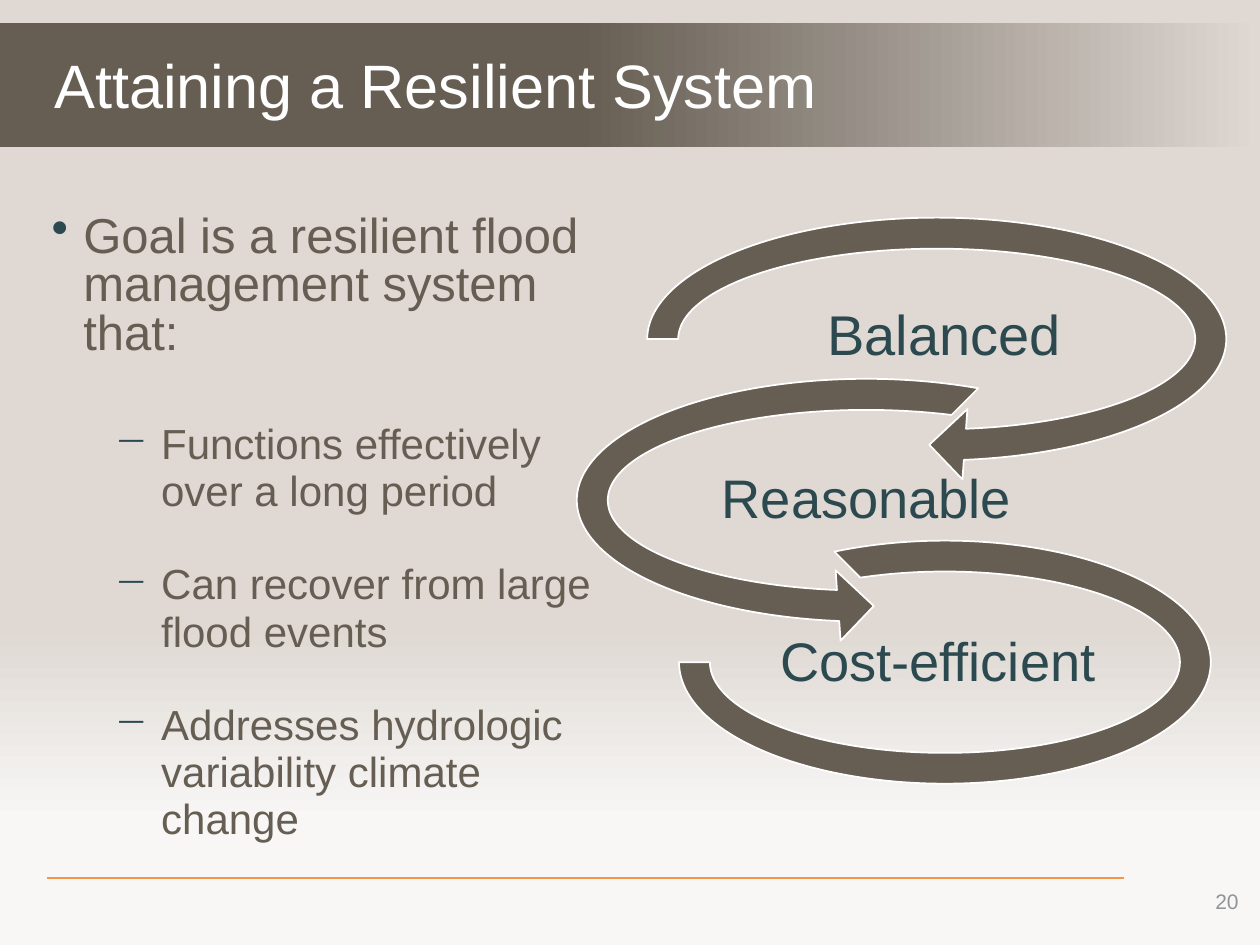
from lxml import etree
from pptx import Presentation
from pptx.dml.color import RGBColor
from pptx.enum.shapes import MSO_CONNECTOR, MSO_SHAPE
from pptx.enum.text import MSO_ANCHOR, PP_ALIGN
from pptx.oxml.ns import qn
from pptx.util import Cm, Pt

BROWN = RGBColor(0x66, 0x5E, 0x53)
TEAL = RGBColor(0x2B, 0x49, 0x4E)
SAND = RGBColor(0xDF, 0xD8, 0xD3)
PALE = RGBColor(0xF8, 0xF7, 0xF6)
ORANGE = RGBColor(0xF7, 0x96, 0x49)
GREY = RGBColor(0x8F, 0x95, 0x97)
WHITE = RGBColor(0xFF, 0xFF, 0xFF)

RECT = MSO_SHAPE.RECTANGLE
RIGHT_ARROW = MSO_SHAPE.CIRCULAR_ARROW
LEFT_ARROW = MSO_SHAPE.LEFT_CIRCULAR_ARROW
ARC = MSO_SHAPE.BLOCK_ARC
STRAIGHT = MSO_CONNECTOR.STRAIGHT
MIDDLE, TOP = MSO_ANCHOR.MIDDLE, MSO_ANCHOR.TOP
LEFT, CENTER, RIGHT = PP_ALIGN.LEFT, PP_ALIGN.CENTER, PP_ALIGN.RIGHT


def put(item, values):
    for name, value in values.items():
        setattr(item, name, value)


def blend(fill, angle, stops):
    fill.gradient()
    fill.gradient_angle = angle
    for stop, (place, color) in zip(fill.gradient_stops, stops):
        stop.position = place
        stop.color.rgb = color


class Deck:
    font = "Arial"

    def __init__(self, slide):
        self.slide = slide
        self.shapes = slide.shapes

    def words(self, para, text, size, color, **form):
        put(para, form)
        run = para.add_run()
        run.text = text
        put(run.font, {"name": self.font, "size": Pt(size)})
        run.font.color.rgb = color

    def title(self, box, text, size, color):
        shape = self.shapes.title
        put(shape, dict(zip(("left", "top", "width", "height"), map(Cm, box))))
        put(shape.text_frame, {"vertical_anchor": MIDDLE, "word_wrap": True})
        self.words(shape.text_frame.paragraphs[0], text, size, color,
                   alignment=LEFT, line_spacing=0.9)
        self.shapes._spTree.append(shape._element)

    def frame(self, box, anchor, inset=None):
        frame = self.shapes.add_textbox(*map(Cm, box)).text_frame
        put(frame, {"word_wrap": True, "vertical_anchor": anchor})
        if inset is not None:
            sides = ("left", "top", "right", "bottom")
            put(frame, {f"margin_{side}": Cm(inset) for side in sides})
        return frame

    def text(self, box, text, size, color, align, inset=None, space=1.0):
        frame = self.frame(box, MIDDLE, inset)
        self.words(frame.paragraphs[0], text, size, color,
                   alignment=align, line_spacing=space)

    def list(self, box, items):
        frame = self.frame(box, TOP)
        for i, (text, level, gap) in enumerate(items):
            para = frame.add_paragraph() if i else frame.paragraphs[0]
            mark, left, hang, size, space = LEVELS[level]
            props = para._p.get_or_add_pPr()
            props.set("marL", str(Cm(left)))
            props.set("indent", str(-Cm(hang)))
            tint = etree.SubElement(props, qn("a:buClr"))
            etree.SubElement(tint, qn("a:srgbClr")).set("val", str(TEAL))
            etree.SubElement(props, qn("a:buChar")).set("char", mark)
            self.words(para, text, size, BROWN, level=level,
                       line_spacing=space, space_before=Pt(gap))

    def shape(self, kind, box, turns=()):
        shape = self.shapes.add_shape(kind, *map(Cm, box))
        shape.shadow.inherit = False
        for i, turn in enumerate(turns):
            shape.adjustments[i] = turn
        return shape

    def band(self, box, angle, stops):
        shape = self.shape(RECT, box)
        blend(shape.fill, angle, stops)
        shape.line.fill.background()

    def loop(self, kind, box, turns):
        shape = self.shape(kind, box, turns)
        shape.fill.solid()
        shape.fill.fore_color.rgb = BROWN
        shape.line.color.rgb = WHITE
        shape.line.width = Pt(1)

    def rule(self, ends, color, width):
        line = self.shapes.add_connector(STRAIGHT, *map(Cm, ends))
        line.line.color.rgb = color
        line.line.width = Pt(width)
        etree.SubElement(line._element.spPr, qn("a:effectLst"))


LEVELS = [("•", 0.64, 0.64, 28, 0.83), ("−", 2.21, 0.94, 24, 0.94)]
GOALS = [
    ("Goal is a resilient flood management system that:", 0, 0),
    ("Functions effectively over a long period", 1, 35),
    ("Can recover from large flood events", 1, 26),
    ("Addresses hydrologic variability climate change", 1, 26),
]
LOOPS = [
    (RIGHT_ARROW, (12.65, 3.99, 12.47, 5.69), (0.11, 11.42, 45, 108, 0.125),
     "Balanced", 15.57, 6.02, 32),
    (LEFT_ARROW, (11.23, 7.24, 12.47, 5.69), (0.11, 11.42, 63, 189, 0.125),
     "Reasonable", 14, 9.32, 31),
    (ARC, (13.69, 10.9, 10.72, 4.9), (135, 108, 0.127),
     "Cost-efficient", 15.44, 12.6, 31),
]


def main():
    show = Presentation()
    show.slide_width, show.slide_height = Cm(25.4), Cm(19.05)
    deck = Deck(show.slides.add_slide(show.slide_layouts[5]))
    blend(deck.slide.background.fill, 90, [(0.13, PALE), (0.34, SAND)])
    deck.rule((22.66, 17.7, 0.94, 17.7), ORANGE, 1.5)
    deck.band((0, 0.46, 25.4, 2.51), 180, [(0, SAND), (0.54, BROWN)])
    deck.list((0.79, 4.19, 11.46, 12.57), GOALS)
    deck.title((0.84, 0.53, 23.72, 2.51), "Attaining a Resilient System", 35, WHITE)
    deck.text((17.93, 17.65, 7.29, 1.02), "20", 12, GREY, RIGHT)
    for kind, box, turns, label, left, top, size in LOOPS:
        deck.loop(kind, box, turns)
        deck.text((left, top, 6.93, 1.57), label, size, TEAL, CENTER, 0.05, 0.9)
    show.save("out.pptx")


if __name__ == "__main__":
    main()
